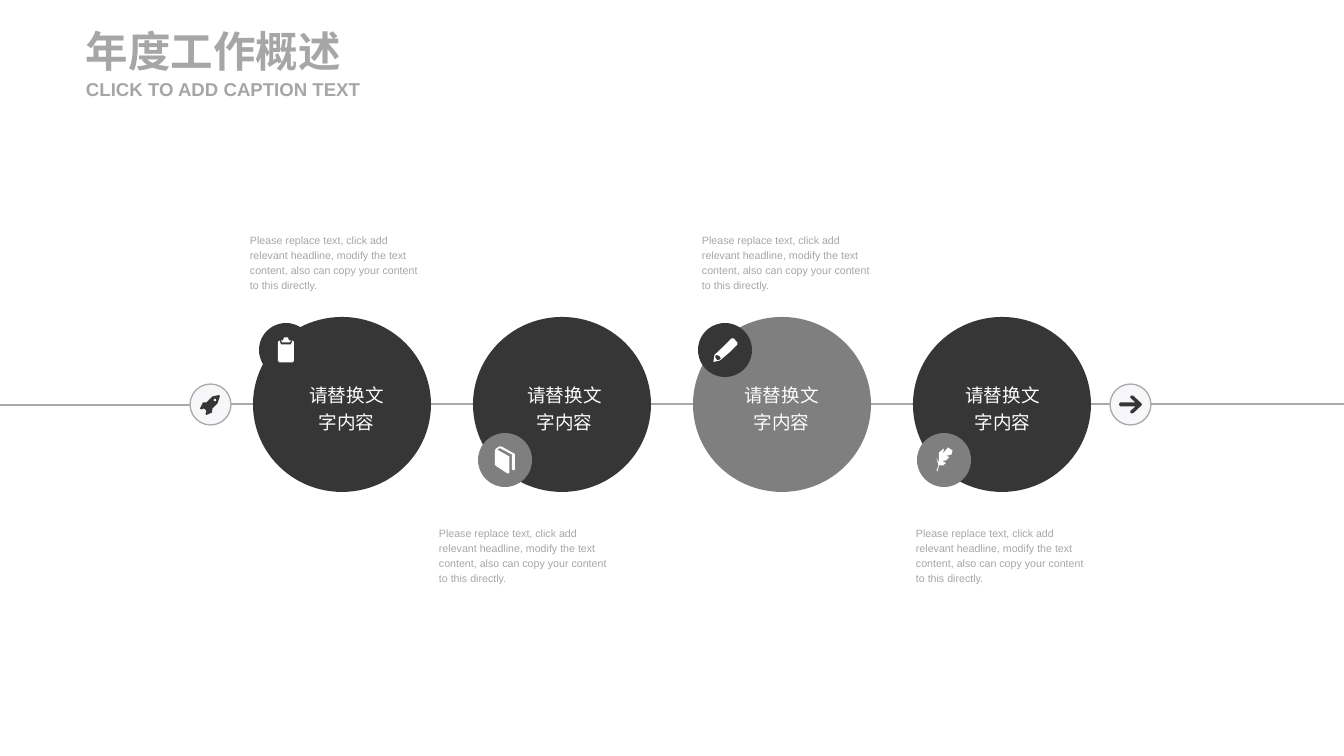
import pptx
import pptx.dml.color
import pptx.enum.shapes
import pptx.enum.text
import pptx.oxml.ns
import pptx.oxml.xmlchemy
import pptx.util

PX = 9566  # EMU per px
THEME = {
    "font": "Arial", "dark": "363636", "mid": "7F7F7F", "line": "A6AAA9",
    "pale": "F7F7FA", "white": "FFFFFF", "label": "FCFCFC", "grey": "A6A6A6",
    "title_pt": 32, "label_pt": 14, "caption_pt": 8, "line_pt": 1,
}
ALIGN = pptx.enum.text.PP_ALIGN
ANCHOR = pptx.enum.text.MSO_ANCHOR
OVAL = pptx.enum.shapes.MSO_SHAPE.OVAL

# Icon outlines: half-px points around the centre of their badge
ICONS = {
    "clipboard": [
        [(-4, -25), (-6, -19), (-10, -19), (-8, -15), (8, -15), (10, -19),
         (6, -19), (4, -25)],
        [(-13, -19), (-16, -16), (-16, 22), (-13, 25), (13, 25), (16, 22),
         (16, -16), (13, -19), (10, -11), (-10, -11)]],
    "book": [
        [(18, -13), (-7, -27), (-11, -27), (-18, -23), (-20, -19), (-20, 10),
         (-18, 12), (5, 27), (7, 27), (9, 25), (9, -6), (7, -8), (-16, -21),
         (-12, -23), (-9, -23), (14, -11), (14, 19), (18, 21), (20, 19),
         (20, -12)]],
    "pencil": [
        [(21, -19), (18, -23), (13, -23), (-2, -8), (-21, 10), (-23, 24),
         (-10, 21), (10, 4), (25, -11), (25, -15)],
        [(-10, 19), (-15, 21), (-19, 16), (-19, 11), (-17, 10), (-11, 12),
         (-8, 17)]],
    "quill": [
        [(-13, 23), (-10, 11), (-2, 11), (4, 6), (-4, 2), (4, 1), (11, -6),
         (4, -8), (15, -11), (17, -19), (8, -25), (-2, -13), (0, -23),
         (-10, -15), (-10, 6), (-15, -4), (-11, 11), (-15, 21)]],
    "rocket": [
        [(4, 8), (14, -2), (19, -17), (17, -19), (4, -16), (-8, -4),
         (-15, -4), (-21, 8), (-19, 10), (-13, 8), (-8, 13), (-10, 19),
         (-8, 21), (3, 16)],
        [(6, -9), (7, -11), (9, -12), (11, -11), (12, -9), (11, -7),
         (9, -6), (7, -7)]],
    "arrow": [
        [(23, 0), (21, -3), (6, -17), (3, -18), (0, -17), (0, -13), (10, -4),
         (-21, -4), (-23, 0), (-21, 4), (10, 4), (0, 13), (0, 17), (3, 18),
         (6, 17), (21, 3)]],
}

prs = pptx.Presentation()
prs.slide_width, prs.slide_height = 1344 * PX, 756 * PX
s = prs.slides.add_slide(prs.slide_layouts[2])


def write(sp, box, text, size, color, bold=False, align=ALIGN.LEFT,
          anchor=ANCHOR.MIDDLE, spacing=1.0):
    sp.left, sp.top, sp.width, sp.height = [v * PX for v in box]
    tf = sp.text_frame
    tf.word_wrap = True
    tf.auto_size = pptx.enum.text.MSO_AUTO_SIZE.NONE
    tf.vertical_anchor = anchor
    tf.margin_left = tf.margin_top = tf.margin_right = tf.margin_bottom = 0
    p = tf.paragraphs[0]
    p.alignment, p.line_spacing = align, spacing
    p.space_before = pptx.util.Pt(0)
    r = p.add_run()
    r.text = text
    r.font.name, r.font.bold = THEME["font"], bold
    r.font.size = pptx.util.Pt(THEME[size])
    r.font.color.rgb = pptx.dml.color.RGBColor.from_string(THEME[color])


def paint(sp, fill, line=None):
    sp.shadow.inherit = False
    sp.fill.solid()
    sp.fill.fore_color.rgb = pptx.dml.color.RGBColor.from_string(THEME[fill])
    if line:
        sp.line.color.rgb = pptx.dml.color.RGBColor.from_string(THEME[line])
        sp.line.width = pptx.util.Pt(THEME["line_pt"])
    else:
        sp.line.fill.background()


# Title and subtitle
write(s.shapes.title, (86, 25, 293, 51), "年度工作概述", "title_pt", "grey", True)
write(s.placeholders[1], (86, 78, 293, 23), "CLICK TO ADD CAPTION TEXT",
      "label_pt", "grey", True)

# Timeline segments
for x1, x2, y in [(0, 209, 405), (214, 342, 404), (345, 562, 404),
                  (568, 786, 404), (791, 1009, 404), (1013, 1131, 404),
                  (1115, 1344, 404)]:
    cn = s.shapes.add_connector(pptx.enum.shapes.MSO_CONNECTOR.STRAIGHT,
                                x1 * PX, y * PX, x2 * PX, y * PX)
    cn.line.color.rgb = pptx.dml.color.RGBColor.from_string(THEME["line"])
    cn.line.width = pptx.util.Pt(THEME["line_pt"])
    sp_pr = cn._element.spPr
    sp_pr.append(sp_pr.makeelement(pptx.oxml.ns.qn("a:effectLst"), {}))

# Stages: circle fill, label left, caption left and top
badges = []
stages = [
    ("dark", 305, 250, 231, "clipboard", "dark", 259, 323),
    ("dark", 523, 439, 524, "book", "mid", 478, 433),
    ("mid", 740, 702, 231, "pencil", "dark", 698, 323),
    ("dark", 961, 916, 524, "quill", "mid", 917, 433),
]
for i, (fill, label_x, cap_x, cap_y, icon, badge, bx, by) in enumerate(stages):
    paint(s.shapes.add_shape(OVAL, (253 + 220 * i) * PX, 317 * PX,
                             178 * PX, 175 * PX), fill)
    write(s.shapes.add_textbox(0, 0, 0, 0), (label_x, 379, 83, 54),
          "请替换文字内容", "label_pt", "label", align=ALIGN.CENTER, spacing=1.2)
    write(s.shapes.add_textbox(0, 0, 0, 0), (cap_x, cap_y, 174, 60),
          "Please replace text, click add relevant headline, modify the text "
          "content, also can copy your content to this directly.",
          "caption_pt", "grey", anchor=ANCHOR.TOP, spacing=1.2)
    badges.append((icon, bx, by, 54, badge, None, "white"))

# Start and end markers join the stage badges
badges += [("rocket", 190, 384, 41, "pale", "line", "dark"),
           ("arrow", 1110, 384, 41, "pale", "line", "dark")]
for icon, x, y, size, fill, line, ink in badges:
    paint(s.shapes.add_shape(OVAL, x * PX, y * PX, size * PX, size * PX),
          fill, line)
    first, *others = ICONS[icon]
    fb = s.shapes.build_freeform(*first[0], scale=PX / 2)
    fb.add_line_segments(first[1:])
    for outline in others:
        fb.move_to(*outline[0])
        fb.add_line_segments(outline[1:])
    paint(fb.convert_to_shape((2 * x + size) * PX // 2,
                              (2 * y + size) * PX // 2), ink)

prs.save("out.pptx")
